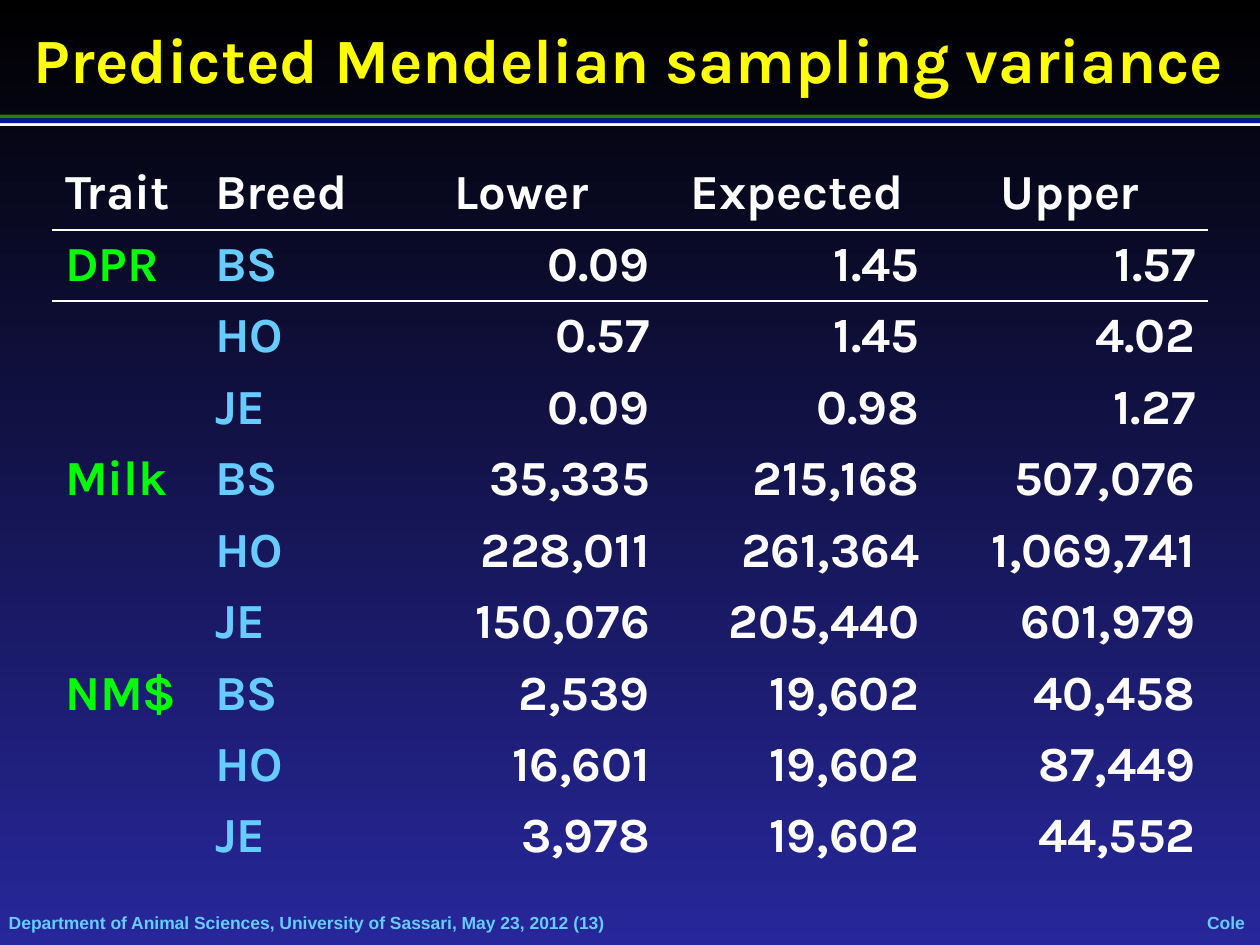
from dataclasses import dataclass

from lxml import etree
from pptx import Presentation
from pptx.dml.color import RGBColor
from pptx.enum import shapes, text
from pptx.oxml import ns
from pptx.util import Pt


@dataclass(frozen=True)
class Theme:
    night: str = "000000"
    blue: str = "27279B"
    band: str = "001799"
    leaf: str = "2A7E00"
    white: str = "FFFFFF"
    gold: str = "FFFF00"
    lime: str = "00FF00"
    sky: str = "66CCFF"
    face: str = "Karla"
    plain: str = "Arial"
    big: float = 36
    mid: float = 28
    small: float = 10


LEFT, MID, RIGHT = text.PP_ALIGN.LEFT, text.PP_ALIGN.CENTER, text.PP_ALIGN.RIGHT
BARE = "{2D5ABB26-0587-4C30-8999-92F81FD0307C}"


def write(frame, words, *, size, tint, face, align=LEFT, before=0):
    para = frame.paragraphs[0]
    para.alignment = align
    para.space_before = Pt(before)
    run = para.add_run()
    run.text = words
    run.font.size = Pt(size)
    run.font.name = face
    run.font.bold = True
    run.font.color.rgb = RGBColor.from_string(tint)


def rule(cell, side, tint, width):
    line = etree.Element(ns.qn(f"a:{side}"), w=str(Pt(width)))
    fill = etree.SubElement(line, ns.qn("a:solidFill"))
    etree.SubElement(fill, ns.qn("a:srgbClr"), val=tint)
    cell._tc.get_or_add_tcPr().insert(0, line)


class Deck:
    def __init__(self, theme):
        self.theme = theme
        self.file = Presentation()
        self.file.slide_width, self.file.slide_height = Pt(720), Pt(540)
        self.slide = self.file.slides.add_slide(self.file.slide_layouts[5])

    def ground(self):
        fill = self.slide.background.fill
        fill.gradient()
        fill.gradient_angle = 270
        for stop, tint, place in zip(fill.gradient_stops, (self.theme.night, self.theme.blue), (0, 1)):
            stop.color.rgb = RGBColor.from_string(tint)
            stop.position = place

    def title(self, words, x, y, w, h):
        box = self.slide.shapes.title
        box.left, box.top, box.width, box.height = map(Pt, (x, y, w, h))
        frame = box.text_frame
        frame.auto_size = text.MSO_AUTO_SIZE.NONE
        frame.vertical_anchor = text.MSO_ANCHOR.MIDDLE
        write(frame, words, size=self.theme.big, tint=self.theme.gold, face=self.theme.face)

    def note(self, words, x, y, w, h, align=LEFT, wrap=True):
        frame = self.slide.shapes.add_textbox(*map(Pt, (x, y, w, h))).text_frame
        frame.margin_left = frame.margin_right = frame.margin_top = frame.margin_bottom = 0
        frame.word_wrap = wrap
        frame.vertical_anchor = text.MSO_ANCHOR.MIDDLE
        write(frame, words, size=self.theme.small, tint=self.theme.sky,
              face=self.theme.plain, align=align)

    def bar(self, y, h, tint):
        shape = self.slide.shapes.add_shape(
            shapes.MSO_SHAPE.RECTANGLE, 0, Pt(y), Pt(720), Pt(h))
        shape.shadow.inherit = False
        shape.fill.solid()
        shape.fill.fore_color.rgb = RGBColor.from_string(tint)
        shape.line.fill.background()

    def table(self, head, rows, x, y, widths, high):
        count = len(rows) + 1
        grid = self.slide.shapes.add_table(
            count, len(head), Pt(x), Pt(y), Pt(sum(widths)), Pt(high * count)).table
        grid.first_row = grid.horz_banding = False
        grid._tbl.tblPr.find(ns.qn("a:tableStyleId")).text = BARE
        for col, width in zip(grid.columns, widths):
            col.width = Pt(width)
        for row in grid.rows:
            row.height = Pt(high)
        theme = self.theme
        tints = [theme.lime, theme.sky] + [theme.white] * 3
        for r, row in enumerate([head, *rows]):
            for c, words in enumerate(row):
                cell = grid.cell(r, c)
                cell.fill.background()
                if r < 2:
                    rule(cell, "lnT" if r else "lnB", theme.white, 1.5)
                if words:
                    align = LEFT if c < 2 else RIGHT if r else MID
                    write(cell.text_frame, words, size=theme.mid, face=theme.face,
                          tint=tints[c] if r else theme.white, align=align, before=16)


HEAD = ["Trait", "Breed", "Lower", "Expected", "Upper"]
ROWS = [
    ["DPR", "BS", "0.09", "1.45", "1.57"],
    ["", "HO", "0.57", "1.45", "4.02"],
    ["", "JE", "0.09", "0.98", "1.27"],
    ["Milk", "BS", "35,335", "215,168", "507,076"],
    ["", "HO", "228,011", "261,364", "1,069,741"],
    ["", "JE", "150,076", "205,440", "601,979"],
    ["NM$", "BS", "2,539", "19,602", "40,458"],
    ["", "HO", "16,601", "19,602", "87,449"],
    ["", "JE", "3,978", "19,602", "44,552"],
]


def main():
    theme = Theme()
    deck = Deck(theme)
    deck.ground()
    deck.note("Department of Animal Sciences, University of Sassari, May 23, 2012 (13)",
              5, 521.3, 582.5, 12.2)
    deck.note("Cole", 689.8, 521, 21.6, 12.2, align=MID, wrap=False)
    for y, h, tint in [(65.5, 2.2, theme.leaf), (70, 2, theme.white), (67.7, 2.7, theme.band)]:
        deck.bar(y, h, tint)
    deck.title("Predicted Mendelian sampling variance", 12.2, 8, 695.6, 50.4)
    deck.table(HEAD, ROWS, 30, 90.5, [85.7, 102.2, 160.6, 154.1, 157.7], 40)
    deck.file.save("out.pptx")


if __name__ == "__main__":
    main()
